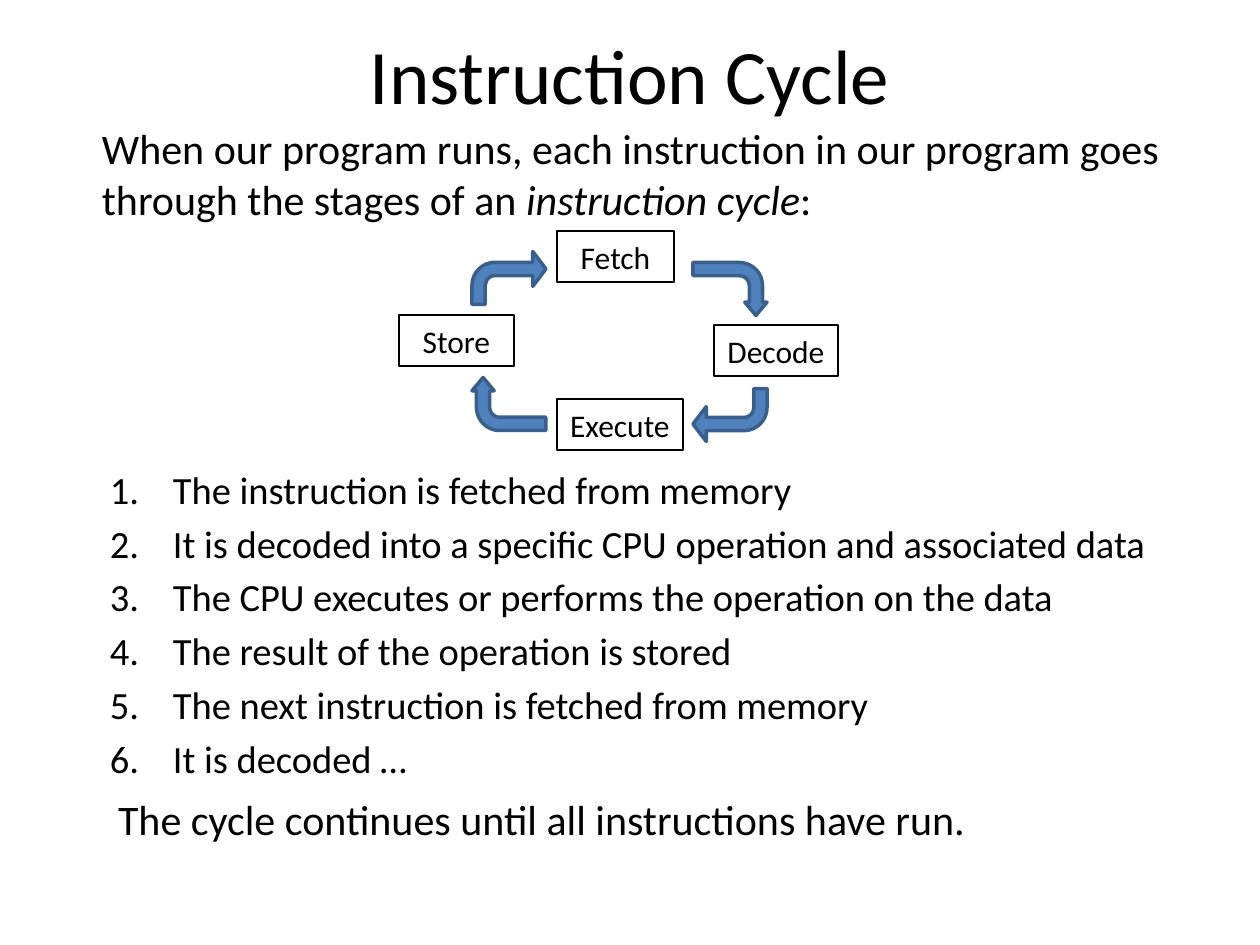
from pptx import Presentation
from pptx.dml.color import RGBColor
from pptx.enum.shapes import MSO_SHAPE as Kind
from pptx.enum.text import MSO_ANCHOR as Anchor, PP_ALIGN as Align
from pptx.util import Emu, Pt
from lxml.etree import SubElement
from pptx.oxml.ns import qn

# Content: each paragraph is a list of (text, italic) runs
TITLE = [[("Instruction Cycle", False)]]
INTRO = [[
    ("When our program runs, each instruction in our program goes through the stages of an ", False),
    ("instruction cycle", True),
    (":", False),
]]
STEPS = [
    "The instruction is fetched from memory",
    "It is decoded into a specific CPU operation and associated data",
    "The CPU executes or performs the operation on the data",
    "The result of the operation is stored",
    "The next instruction is fetched from memory",
    "It is decoded …",
]
CLOSING = [[("The cycle continues until all instructions have run.", False)]]

# Stage: name, left, top, width
STAGES = [
    ("Fetch", 557, 231, 117),
    ("Decode", 714, 325, 124),
    ("Execute", 557, 399, 126),
    ("Store", 399, 315, 115),
]
STAGE_H = 51

# Arrow: centre x, centre y, quarter turns
ARROWS = [(509, 278, 0), (730, 289, 1), (730, 415, 2), (509, 404, 3)]
LONG, SHORT = 74, 53
BEND = (0.33, 0.21)

COLORS = {"text": "000000", "fill": "4F81BD", "edge": "3A5F8C"}
FONT = "Calibri"
INDENT = 63


def px(n):
    return Emu(round(n * 914400 / 126))


def color(name):
    return RGBColor.from_string(COLORS[name])


def outline(shape, name, width):
    shape.line.color.rgb = color(name)
    shape.line.width = Pt(width)


def number(par):
    props = par._p.get_or_add_pPr()
    props.set("marL", str(px(INDENT)))
    props.set("indent", str(-px(INDENT)))
    SubElement(props, qn("a:buFont"), typeface="+mj-lt")
    SubElement(props, qn("a:buAutoNum"), type="arabicPeriod")


def write(paras, box, size, align=Align.LEFT, anchor=Anchor.TOP,
          wrap=True, gap=0, numbered=False):
    shape = slide.shapes.add_textbox(*map(px, box))
    frame = shape.text_frame
    frame.word_wrap = wrap
    frame.vertical_anchor = anchor
    frame.margin_left = frame.margin_right = 0
    frame.margin_top = frame.margin_bottom = 0
    for i, runs in enumerate(paras):
        par = frame.add_paragraph() if i else frame.paragraphs[0]
        par.alignment = align
        par.space_before = Pt(gap if i else 0)
        if numbered:
            number(par)
        for text, italic in runs:
            run = par.add_run()
            run.text = text
            font = run.font
            font.name, font.size, font.italic = FONT, Pt(size), italic
            font.color.rgb = color("text")
    return shape


deck = Presentation()
deck.slide_width, deck.slide_height = px(1260), px(945)
slide = deck.slides.add_slide(deck.slide_layouts[6])

# Title and text
write(TITLE, (63, 21, 1134, 105), 44, align=Align.CENTER, anchor=Anchor.MIDDLE)
write(INTRO, (102, 123, 1082, 103), 24)
write([[(step, False)] for step in STEPS], (110, 466, 1074, 320), 22,
      gap=4.3, numbered=True)
write(CLOSING, (118, 794, 1066, 52), 24)

# Stages of the cycle
for name, left, top, width in STAGES:
    stage = write([[(name, False)]], (left, top, width, STAGE_H), 18,
                  align=Align.CENTER, anchor=Anchor.MIDDLE, wrap=False)
    outline(stage, "text", 0.75)

# Arrows between the stages, each a quarter turn further
for x, y, turn in ARROWS:
    odd = turn % 2
    w, h = (SHORT, LONG) if odd else (LONG, SHORT)
    arrow = slide.shapes.add_shape(
        Kind.BENT_ARROW, px(x - w / 2), px(y - h / 2), px(w), px(h))
    arrow.rotation = 90 * turn
    arrow.adjustments[1] = BEND[odd]
    arrow.shadow.inherit = False
    arrow.fill.solid()
    arrow.fill.fore_color.rgb = color("fill")
    outline(arrow, "edge", 2)

deck.save("out.pptx")
